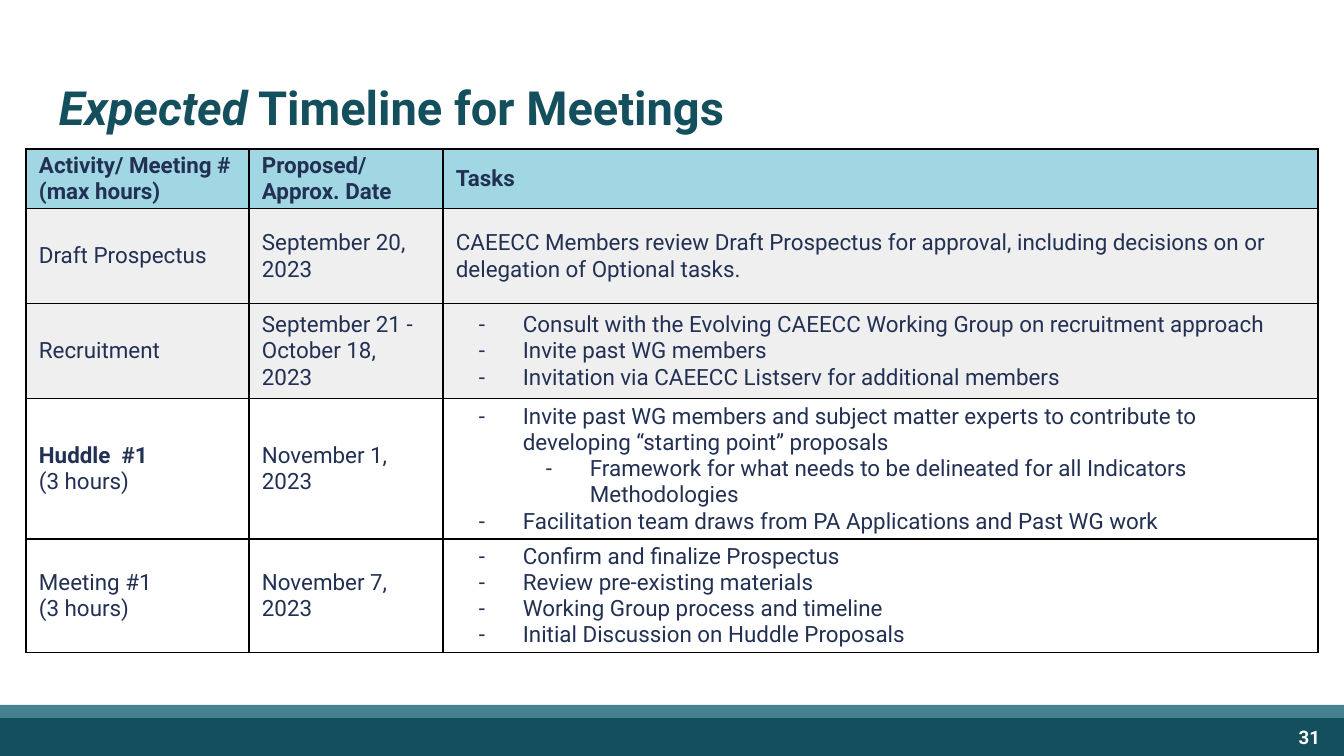
from dataclasses import dataclass

from lxml.etree import SubElement
from pptx import Presentation
from pptx.dml.color import RGBColor
from pptx.enum.shapes import MSO_SHAPE
from pptx.enum.text import MSO_ANCHOR, PP_ALIGN
from pptx.oxml import parse_xml
from pptx.oxml.ns import nsdecls, qn
from pptx.util import Emu, Pt


@dataclass(frozen=True)
class Theme:
    font: str = "Roboto"
    deep_teal: str = "134F5C"
    mid_teal: str = "45818E"
    navy: str = "223053"
    header_blue: str = "A1D6E3"
    planning_gray: str = "EFEFEF"
    white: str = "FFFFFF"
    border: str = "000000"
    title_size: float = 25.2
    table_size: float = 12
    number_size: float = 10
    border_width: float = 0.75


THEME = Theme()
EMU_PER_PX = 914400 / 134.4

COLUMN_WIDTHS = [223, 194, 875]
ROW_HEIGHTS = [58, 95, 95, 137, 110]
ROW_FILLS = [THEME.header_blue, THEME.planning_gray, THEME.planning_gray, None, None]
BULLET_INDENT = 67
BULLET_HANG = 44

HEADINGS = [["Activity/ Meeting #", "(max hours)"], ["Proposed/ Approx. Date"], ["Tasks"]]
MEETINGS = [
    [
        ["Draft Prospectus"],
        ["September 20, 2023"],
        ["CAEECC Members review Draft Prospectus for approval, including "
         "decisions on or delegation of Optional tasks."],
    ],
    [
        ["Recruitment"],
        ["September 21 - October 18, 2023"],
        [
            (0, "Consult with the Evolving CAEECC Working Group on recruitment approach"),
            (0, "Invite past WG members"),
            (0, "Invitation via CAEECC Listserv for additional members"),
        ],
    ],
    [
        ["Huddle  #1", "(3 hours)"],
        ["November 1, 2023"],
        [
            (0, "Invite past WG members and subject matter experts to contribute to "
                "developing “starting point” proposals"),
            (1, "Framework for what needs to be delineated for all Indicators Methodologies"),
            (0, "Facilitation team draws from PA Applications and Past WG work"),
        ],
    ],
    [
        ["Meeting #1", "(3 hours)"],
        ["November 7, 2023"],
        [
            (0, "Confirm and finalize Prospectus"),
            (0, "Review pre-existing materials"),
            (0, "Working Group process and timeline"),
            (0, "Initial Discussion on Huddle Proposals"),
        ],
    ],
]
BOLD_LINES = {"Huddle  #1"}


def px(length):
    return Emu(round(length * EMU_PER_PX))


def style_run(run, size, color, bold=False, italic=False):
    run.font.name = THEME.font
    run.font.size = Pt(size)
    run.font.color.rgb = RGBColor.from_string(color)
    run.font.bold = bold
    run.font.italic = italic


def add_band(slide, top, height, color):
    band = slide.shapes.add_shape(MSO_SHAPE.RECTANGLE, px(-1), px(top), px(1345), px(height))
    band.shadow.inherit = False
    band.fill.solid()
    band.fill.fore_color.rgb = RGBColor.from_string(color)
    band.line.fill.background()


def add_text(slide, bounds, runs, size, color, align=PP_ALIGN.LEFT, anchor=MSO_ANCHOR.TOP):
    frame = slide.shapes.add_textbox(*map(px, bounds)).text_frame
    frame.word_wrap = True
    frame.vertical_anchor = anchor
    frame.margin_left = frame.margin_right = px(13)
    frame.margin_top = frame.margin_bottom = px(13)
    line = frame.paragraphs[0]
    line.alignment = align
    for words, italic in runs:
        run = line.add_run()
        run.text = words
        style_run(run, size, color, bold=True, italic=italic)


def add_dash(paragraph, level):
    paragraph.level = level
    properties = paragraph._p.get_or_add_pPr()
    properties.set("marL", str(px(BULLET_INDENT * (level + 1))))
    properties.set("indent", str(px(-BULLET_HANG)))
    bullet_color = SubElement(properties, qn("a:buClr"))
    SubElement(bullet_color, qn("a:srgbClr")).set("val", THEME.navy)
    SubElement(properties, qn("a:buFont")).set("typeface", THEME.font)
    SubElement(properties, qn("a:buChar")).set("char", "-")


def add_borders(cell):
    properties = cell._tc.get_or_add_tcPr()
    for position, side in enumerate(["lnL", "lnR", "lnT", "lnB"]):
        properties.insert(position, parse_xml(
            f'<a:{side} {nsdecls("a")} w="{Pt(THEME.border_width)}">'
            f'<a:solidFill><a:srgbClr val="{THEME.border}"/></a:solidFill></a:{side}>'
        ))


def fill_cell(cell, lines, fill, is_heading):
    cell.vertical_anchor = MSO_ANCHOR.MIDDLE
    cell.margin_left = cell.margin_right = px(13)
    cell.margin_top = cell.margin_bottom = px(3)
    if fill:
        cell.fill.solid()
        cell.fill.fore_color.rgb = RGBColor.from_string(fill)
    else:
        cell.fill.background()
    add_borders(cell)
    tasks = [line if isinstance(line, tuple) else (None, line) for line in lines]
    cell.text_frame.text = "\n".join(words for _, words in tasks)
    for paragraph, (level, words) in zip(cell.text_frame.paragraphs, tasks):
        if level is not None:
            add_dash(paragraph, level)
        style_run(paragraph.runs[0], THEME.table_size, THEME.navy,
                  bold=is_heading or words in BOLD_LINES)


def add_timeline(slide):
    rows = [HEADINGS, *MEETINGS]
    timeline = slide.shapes.add_table(
        len(rows), len(COLUMN_WIDTHS), px(26), px(149),
        px(sum(COLUMN_WIDTHS)), px(sum(ROW_HEIGHTS))
    ).table
    timeline.horz_banding = False
    for column, width in zip(timeline.columns, COLUMN_WIDTHS):
        column.width = px(width)
    for row_index, (row, height, fill) in enumerate(zip(rows, ROW_HEIGHTS, ROW_FILLS)):
        timeline.rows[row_index].height = px(height)
        for column_index, lines in enumerate(row):
            fill_cell(timeline.cell(row_index, column_index), lines, fill, row_index == 0)


def main():
    deck = Presentation()
    deck.slide_width, deck.slide_height = px(1344), px(756)
    slide = deck.slides.add_slide(deck.slide_layouts[6])
    slide.background.fill.solid()
    slide.background.fill.fore_color.rgb = RGBColor.from_string(THEME.white)
    add_band(slide, 718, 38, THEME.deep_teal)
    add_band(slide, 705, 13, THEME.mid_teal)
    add_text(slide, (46, 66, 1253, 85),
             [("Expected", True), (" Timeline for Meetings", False)],
             THEME.title_size, THEME.deep_teal)
    add_text(slide, (1253, 718, 80, 38), [("31", False)],
             THEME.number_size, THEME.white, PP_ALIGN.RIGHT, MSO_ANCHOR.MIDDLE)
    add_timeline(slide)
    deck.save("out.pptx")


if __name__ == "__main__":
    main()
